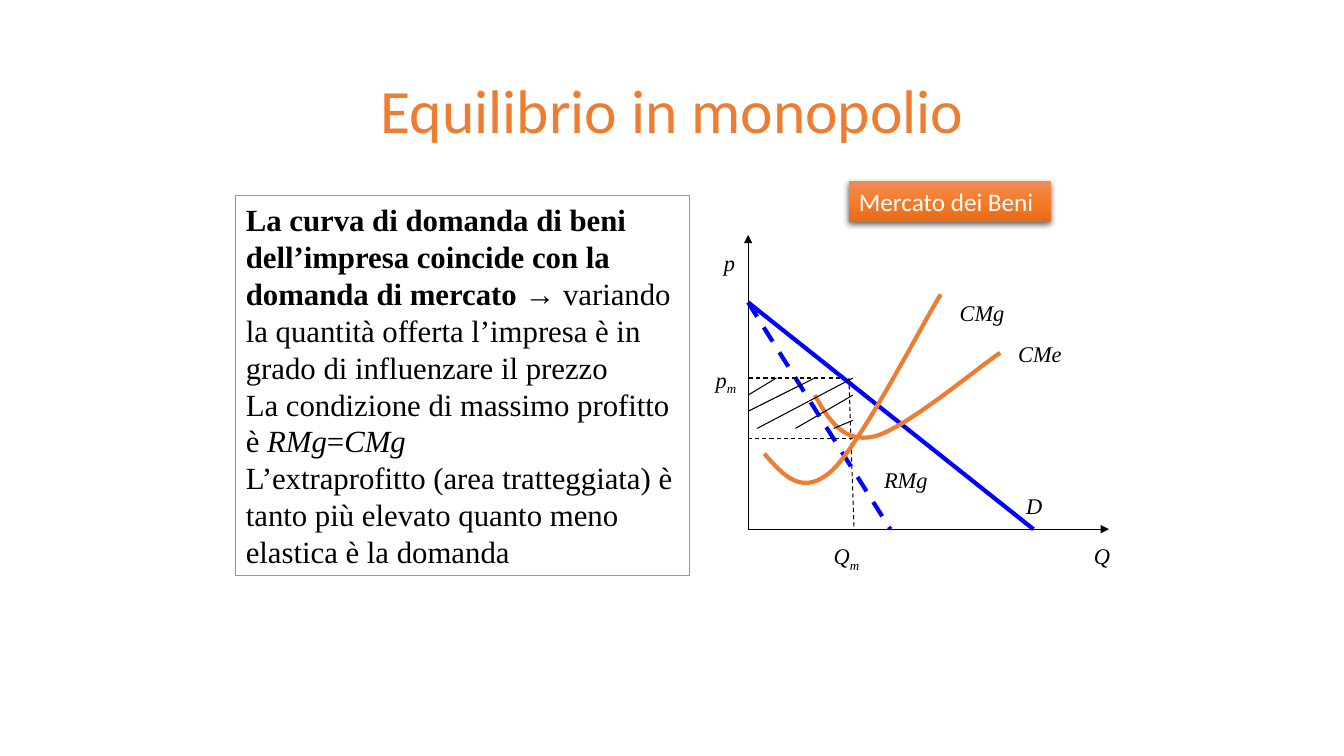
import copy
from dataclasses import dataclass

import pptx
import pptx.dml.color
import pptx.enum.dml
import pptx.enum.shapes
import pptx.enum.text
import pptx.oxml.ns
import pptx.util
from lxml import etree

Inches = pptx.util.Inches
qn = pptx.oxml.ns.qn


@dataclass(frozen=True)
class Theme:
    """Colours, fonts and sizes of the slide."""
    accent: str = "ED7D31"
    demand: str = "0000FF"
    ink: str = "000000"
    white: str = "FFFFFF"
    badge: tuple = ((0, "F18C57"), (0.5, "F67B28"), (1, "E56C19"))
    sans: str = "Calibri"
    serif: str = "Times New Roman"
    title_size: int = 44
    body_size: int = 22
    badge_size: int = 18
    label_size: int = 16
    thin: float = 0.75
    thick: float = 3


THEME = Theme()
LEFT = pptx.enum.text.PP_ALIGN.LEFT
CENTER = pptx.enum.text.PP_ALIGN.CENTER
BODY = [
    [("La curva di domanda di beni dell’impresa coincide con la domanda di mercato ", {"bold": True}),
     ("→ variando la quantità offerta l’impresa è in grado di influenzare il prezzo", {})],
    [("La condizione di massimo profitto è ", {}), ("RMg", {"italic": True}),
     ("=", {}), ("CMg", {"italic": True})],
    [("L’extraprofitto (area tratteggiata) è tanto più elevato quanto meno elastica è la domanda", {})],
]
LINES = [
    ((0, 0), (0, 2.92), {"arrow": True}),
    ((0, 0), (3.58, 0), {"arrow": True}),
    ((0, 2.25), (2.83, 0), {"color": THEME.demand, "width": THEME.thick}),
    ((0, 2.25), (1.41, 0), {"color": THEME.demand, "width": THEME.thick, "dashed": True}),
    ((1, 1.5), (1.05, 0), {"dashed": True}),
    ((0.91, 1.5), (0, 1.5), {"dashed": True}),
    ((1.04, 0.9), (0, 0.9), {"dashed": True}),
]
HATCHING = [
    ((0, 1.33), (0.28, 1.5)),
    ((0, 1.17), (0.66, 1.5)),
    ((0.09, 1), (1.04, 1.5)),
    ((0.47, 1), (1.04, 1.33)),
    ((0.85, 1), (1.04, 1.08)),
]
COST_CURVES = [
    [(0.16, 0.75), (0.35, 0.53), (0.54, 0.32), (0.83, 0.58), (1.12, 0.85), (1.73, 2.04), (1.91, 2.33)],
    [(0.66, 1.33), (0.8, 1.09), (0.94, 0.85), (1.25, 0.92), (1.55, 0.99), (2.29, 1.61), (2.5, 1.75)],
]
LABELS = [
    ("p", "", -0.34, 2.83, 0.42),
    ("Q", "", 3.33, -0.08, 0.5),
    ("D", "", 2.66, 0.42, 0.67),
    ("RMg", "", 1.25, 0.67, 1.17),
    ("CMg", "", 2, 2.33, 1),
    ("Q", "m", 0.75, -0.08, 0.75),
    ("CMe", "", 2.58, 1.92, 0.75),
    ("p", "m", -0.42, 1.67, 0.5),
]


def rgb(value):
    """Turn a hex string into a colour."""
    return pptx.dml.color.RGBColor.from_string(value)


def add_span(para, text, color, **formats):
    """Add one formatted run to a paragraph."""
    span = para.add_run()
    span.text = text
    for name, value in formats.items():
        setattr(span.font, name, value)
    span.font.color.rgb = rgb(color)
    return span


def set_frame(shape, anchor=pptx.enum.text.MSO_ANCHOR.TOP):
    """Make a shape wrap its text and grow with it."""
    formats = {"word_wrap": True, "vertical_anchor": anchor,
               "auto_size": pptx.enum.text.MSO_AUTO_SIZE.SHAPE_TO_FIT_TEXT}
    for name, value in formats.items():
        setattr(shape.text_frame, name, value)
    return shape.text_frame


def add_title(page, left, top, width, height):
    """Place the slide title."""
    title = page.shapes.title
    box = {"left": left, "top": top, "width": width, "height": height}
    for name, value in box.items():
        setattr(title, name, Inches(value))
    frame = title.text_frame
    frame.auto_size = pptx.enum.text.MSO_AUTO_SIZE.NONE
    frame.vertical_anchor = pptx.enum.text.MSO_ANCHOR.MIDDLE
    para = frame.paragraphs[0]
    para.alignment = CENTER
    para.line_spacing = 0.9
    add_span(para, "Equilibrio in monopolio", THEME.accent,
             name=THEME.sans, size=pptx.util.Pt(THEME.title_size))


def add_rectangle(page, left, top, width, height):
    """Add a plain rectangle without a shadow."""
    shape = page.shapes.add_shape(pptx.enum.shapes.MSO_SHAPE.RECTANGLE,
                                  Inches(left), Inches(top), Inches(width), Inches(height))
    shape.shadow.inherit = False
    return shape


def add_explanation(page, left, top, width, height):
    """Place the framed explanation."""
    box = add_rectangle(page, left, top, width, height)
    box.fill.background()
    box.line.color.rgb = rgb(THEME.accent)
    box.line.width = pptx.util.Pt(THEME.thin)
    frame = set_frame(box)
    for index, spans in enumerate(BODY):
        para = frame.add_paragraph() if index else frame.paragraphs[0]
        para.alignment = LEFT
        for text, formats in spans:
            add_span(para, text, THEME.ink, name=THEME.serif,
                     size=pptx.util.Pt(THEME.body_size), **formats)


def add_badge(page, left, top, width, height):
    """Place the gradient badge that names the market."""
    badge = add_rectangle(page, left, top, width, height)
    badge.line.fill.background()
    badge.fill.gradient()
    stops = badge._element.spPr.find(".//" + qn("a:gsLst"))
    stops.append(copy.deepcopy(stops[0]))
    for stop, (position, color) in zip(badge.fill.gradient_stops, THEME.badge):
        stop.position = position
        stop.color.rgb = rgb(color)
    badge.fill.gradient_angle = 270
    effects = badge._element.spPr.find(qn("a:effectLst"))
    shadow = etree.SubElement(effects, qn("a:outerShdw"), blurRad="57150", dist="19050",
                              dir="5400000", algn="ctr", rotWithShape="0")
    tint = etree.SubElement(shadow, qn("a:srgbClr"), val=THEME.ink)
    etree.SubElement(tint, qn("a:alpha"), val="63000")
    para = set_frame(badge).paragraphs[0]
    para.alignment = LEFT
    add_span(para, "Mercato dei Beni", THEME.white,
             name=THEME.sans, size=pptx.util.Pt(THEME.badge_size))


def add_line(shapes, start, end, color=THEME.ink, width=THEME.thin, dashed=False, arrow=False):
    """Draw a straight line, dashed or with an arrowhead if asked."""
    line = shapes.add_connector(pptx.enum.shapes.MSO_CONNECTOR.STRAIGHT, *start, *end)
    line.line.color.rgb = rgb(color)
    line.line.width = pptx.util.Pt(width)
    if dashed:
        line.line.dash_style = pptx.enum.dml.MSO_LINE.DASH
    if arrow:
        etree.SubElement(line.line._get_or_add_ln(), qn("a:tailEnd"), type="triangle")
    etree.SubElement(line._element.spPr, qn("a:effectLst"))


def trace_curve(knots, steps=24):
    """Sample a chain of cubic Bézier arcs."""
    points = [knots[0]]
    for first in range(0, len(knots) - 1, 3):
        arc = knots[first:first + 4]
        for step in range(1, steps + 1):
            t = step / steps
            weights = ((1 - t) ** 3, 3 * t * (1 - t) ** 2, 3 * t * t * (1 - t), t ** 3)
            points.append(tuple(sum(w * knot[axis] for w, knot in zip(weights, arc))
                                for axis in (0, 1)))
    return points


def add_diagram(page, left, top, height):
    """Draw the market diagram, measured from the corner of its axes."""
    def place(point):
        return Inches(left + point[0]), Inches(top + height - point[1])

    for start, end, formats in LINES:
        add_line(page.shapes, place(start), place(end), **formats)
    for knots in COST_CURVES:
        points = [place(point) for point in trace_curve(knots)]
        builder = page.shapes.build_freeform(*points[0], scale=1.0)
        builder.add_line_segments(points[1:], close=False)
        curve = builder.convert_to_shape()
        curve.shadow.inherit = False
        curve.fill.background()
        curve.line.color.rgb = rgb(THEME.accent)
        curve.line.width = pptx.util.Pt(THEME.thick)
    hatching = page.shapes.add_group_shape()
    for start, end in HATCHING:
        add_line(hatching.shapes, place(start), place(end))
    for text, subscript, across, up, width in LABELS:
        label = page.shapes.add_textbox(*place((across, up)), Inches(width), Inches(0.37))
        para = set_frame(label).paragraphs[0]
        formats = {"name": THEME.serif, "size": pptx.util.Pt(THEME.label_size), "italic": True}
        add_span(para, text, THEME.ink, **formats)
        if subscript:
            span = add_span(para, subscript, THEME.ink, **formats)
            span._r.get_or_add_rPr().set("baseline", "-25000")


def main():
    """Build and save the deck."""
    deck = pptx.Presentation()
    deck.slide_width, deck.slide_height = Inches(13.33), Inches(7.5)
    page = deck.slides.add_slide(deck.slide_layouts[5])
    add_title(page, 0.92, 0.4, 11.5, 1.45)
    add_explanation(page, 2.34, 1.94, 4.5, 3.77)
    add_diagram(page, 7.42, 2.33, 2.92)
    add_badge(page, 8.42, 1.8, 2, 0.4)
    deck.save("out.pptx")


if __name__ == "__main__":
    main()
